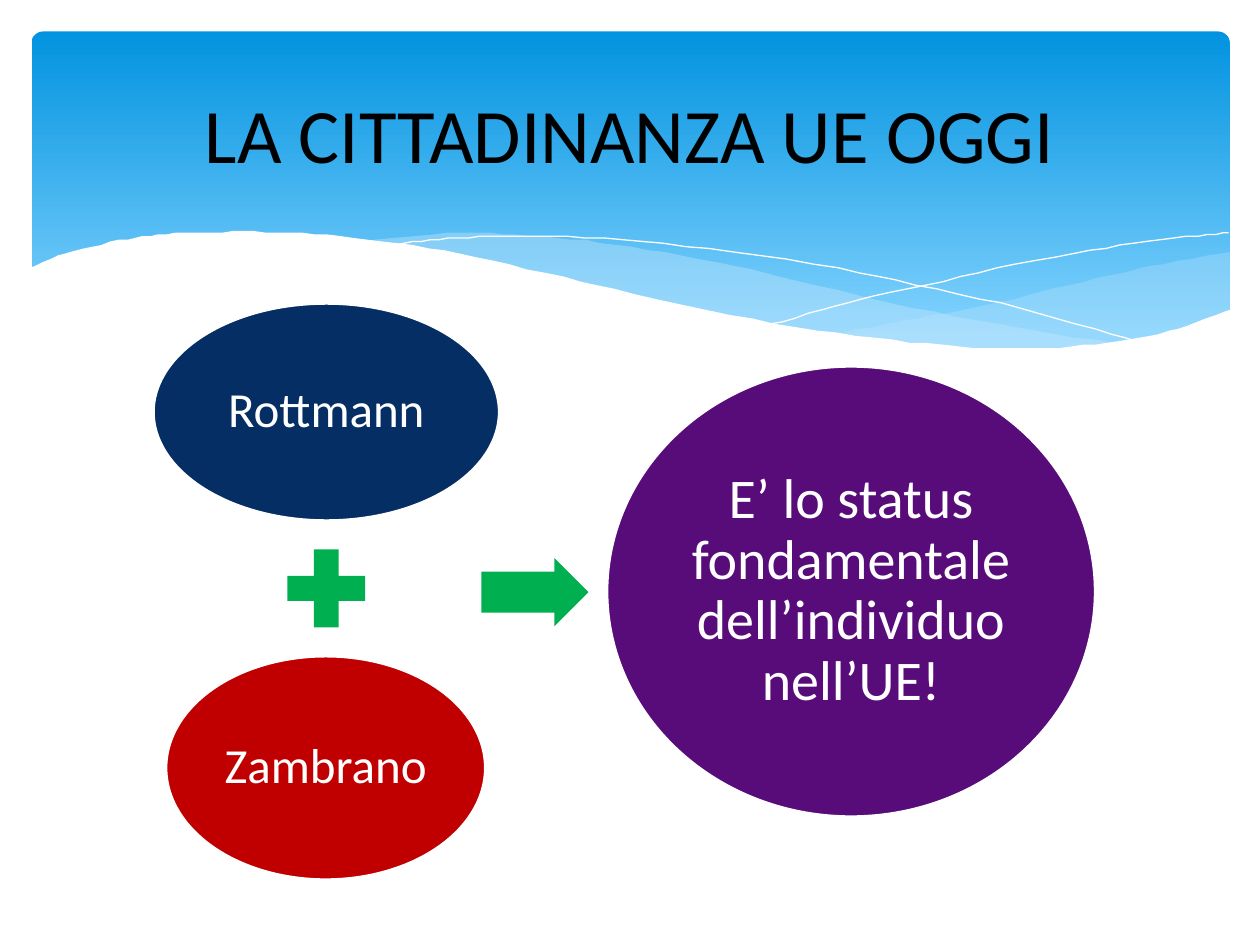
from lxml import etree
from pptx import Presentation
from pptx.dml.color import RGBColor
from pptx.enum.shapes import MSO_SHAPE
from pptx.enum.text import MSO_ANCHOR, PP_ALIGN
from pptx.oxml.ns import qn
from pptx.util import Pt

BANNER, ELLIPSE = MSO_SHAPE.ROUNDED_RECTANGLE, MSO_SHAPE.OVAL
PLUS, ARROW = MSO_SHAPE.MATH_PLUS, MSO_SHAPE.RIGHT_ARROW
MIDDLE, CENTER = MSO_ANCHOR.MIDDLE, PP_ALIGN.CENTER

COLORS = {
    "banner_top": "0293E0", "banner_bottom": "83D3FE", "wave": "C6E7FC",
    "white": "FFFFFF", "black": "000000", "navy": "052E65",
    "red": "C00000", "purple": "580C7A", "green": "00B050",
}

TITLE = "LA CITTADINANZA UE OGGI"
# text, (left, top, width, height), fill, text size
ELLIPSES = [
    ("Rottmann", (87.84, 173.52, 197.28, 123.84), "navy", 28),
    ("Zambrano", (95.04, 375.12, 182.16, 127.44), "red", 28),
    ("E’ lo status fondamentale dell’individuo nell’UE!",
     (347.04, 209.52, 278.64, 257.04), "purple", 32),
]
# preset, (left, top, width, height), adjustments
OPERATORS = [
    (PLUS, (156.24, 306, 60.48, 60.48), []),
    (ARROW, (275.04, 318.96, 61.2, 38.88), [0.6, 0.5]),
]

# Each wave is a list of edges; an edge is a smooth curve through its points.
# edges, fill, opacity in percent
WAVES = [
    ([[(702.7, 144), (673.2, 149), (641.5, 155.5), (620, 160.6), (579.6, 170.6),
       (542.2, 178.6), (508.3, 185), (476, 190.8)],
      [(476, 190.8), (507.6, 195.1), (536.4, 198), (570.2, 199.6), (601.2, 199.6),
       (634.3, 196.6), (663.1, 190.8), (683.3, 185), (702.7, 177.8)]],
     "wave", 29),
    ([[(643, 196.6), (602.6, 190.8), (558, 182.9), (508.3, 172.8), (452.9, 159.8),
       (409.7, 149.8), (370, 142.6), (334.8, 137.5), (302.4, 134.6),
       (273.6, 133.2), (247.7, 133.9), (205.9, 137.5)],
      [(205.9, 137.5), (246.2, 143.3), (290.9, 151.9), (323.3, 159.8),
       (381.6, 172.8), (432.7, 183.6), (478.8, 191.5), (519.8, 197.3),
       (556.6, 199.4), (589, 200.2), (617, 199.4), (643, 196.6)]],
     "wave", 40),
]
STRANDS = [
    [(222.5, 140.4), (241.2, 137.5), (261.4, 136.1), (288.7, 134.6), (324, 135.4),
     (367.2, 138.2), (419, 144), (478.8, 153.4), (523.4, 162.7), (572.4, 173.5),
     (625.7, 187.9), (653, 195.8)],
    [(441.4, 185), (470.2, 177.1), (500.4, 169.2), (538.6, 160.6), (580.3, 151.2),
     (623.5, 143.3), (655.2, 138.2), (684.7, 134.6), (702, 133.2)],
]
BANNER_EDGE = [
    (703.4, 177.1), (684, 184.3), (662.4, 190.8), (638.6, 195.1), (612, 198),
    (582.5, 199.4), (547.9, 198), (509.8, 194.4), (466.6, 188.6), (416.9, 180),
    (362.2, 167.8), (321.8, 158.4), (281.5, 149), (244.8, 141.8), (210.2, 136.8),
    (180, 133.9), (151.9, 132.5), (127.4, 132.5), (105.1, 133.2), (85.7, 134.6),
    (68.4, 137.5), (48.2, 141.8), (33.1, 146.2), (16.6, 153.4),
]
BELOW_BANNER = [(16.6, 236.9), (703.4, 236.9)]
STEPS = 4


def rgb(name):
    return RGBColor.from_string(COLORS[name])


def smooth(points):
    """Return the points of a Catmull-Rom curve through the given points."""
    padded = [points[0], *points, points[-1]]
    curve = [points[0]]
    for a, b, c, d in zip(padded, padded[1:], padded[2:], padded[3:]):
        for step in range(1, STEPS + 1):
            t = step / STEPS
            curve.append(tuple(
                (2 * q + (r - p) * t + (2 * p - 5 * q + 4 * r - s) * t ** 2
                 + (3 * q - p - 3 * r + s) * t ** 3) / 2
                for p, q, r, s in zip(a, b, c, d)))
    return curve


def paint(shape, fill=None, line=None, line_width=0):
    shape.shadow.inherit = False
    if fill:
        shape.fill.solid()
        shape.fill.fore_color.rgb = rgb(fill)
    else:
        shape.fill.background()
    if line:
        shape.line.color.rgb = rgb(line)
        shape.line.width = Pt(line_width)
    else:
        shape.line.fill.background()


def add_preset(slide, preset, box, adjustments=(), **style):
    shape = slide.shapes.add_shape(preset, *map(Pt, box))
    for index, value in enumerate(adjustments):
        shape.adjustments[index] = value
    paint(shape, **style)
    return shape


def add_outline(slide, points, close=True, **style):
    builder = slide.shapes.build_freeform(*points[0], scale=Pt(1))
    builder.add_line_segments(points[1:], close=close)
    shape = builder.convert_to_shape()
    paint(shape, **style)
    return shape


def set_opacity(shape, percent):
    color = shape.fill._xPr.find(qn("a:solidFill"))[0]
    etree.SubElement(color, qn("a:alpha")).set("val", str(percent * 1000))


def write(shape, text, size, color, spacing=1.0, margin=None):
    frame = shape.text_frame
    frame.word_wrap = True
    frame.vertical_anchor = MIDDLE
    if margin is not None:
        frame.margin_left = frame.margin_right = Pt(margin)
        frame.margin_top = frame.margin_bottom = Pt(margin)
    paragraph = frame.paragraphs[0]
    paragraph.alignment = CENTER
    paragraph.line_spacing = spacing
    run = paragraph.add_run()
    run.text = text
    run.font.name = "Calibri"
    run.font.size = Pt(size)
    run.font.color.rgb = rgb(color)


def add_banner(slide):
    banner = add_preset(slide, BANNER, (18, 18, 684.72, 194.4), [0.034])
    banner.fill.gradient()
    banner.fill.gradient_angle = 270
    stops = zip(banner.fill.gradient_stops, (0, 0.9), ("banner_top", "banner_bottom"))
    for stop, position, color in stops:
        stop.position = position
        stop.color.rgb = rgb(color)
    for edges, fill, opacity in WAVES:
        points = [point for edge in edges for point in smooth(edge)]
        set_opacity(add_outline(slide, points, fill=fill), opacity)
    for strand in STRANDS:
        add_outline(slide, smooth(strand), close=False, line="white")
    add_outline(slide, smooth(BANNER_EDGE) + BELOW_BANNER, fill="white")


def main():
    presentation = Presentation()
    presentation.slide_width, presentation.slide_height = Pt(720), Pt(540)
    slide = presentation.slides.add_slide(presentation.slide_layouts[6])
    add_banner(slide)
    for text, box, fill, size in ELLIPSES:
        ellipse = add_preset(slide, ELLIPSE, box, fill=fill, line="white", line_width=1.25)
        write(ellipse, text, size, "white", spacing=0.9, margin=2.88)
    for preset, box, adjustments in OPERATORS:
        add_preset(slide, preset, box, adjustments, fill="green")
    title = slide.shapes.add_textbox(*map(Pt, (36, 26.64, 648, 98.64)))
    write(title, TITLE, 44, "black")
    presentation.save("out.pptx")


if __name__ == "__main__":
    main()
